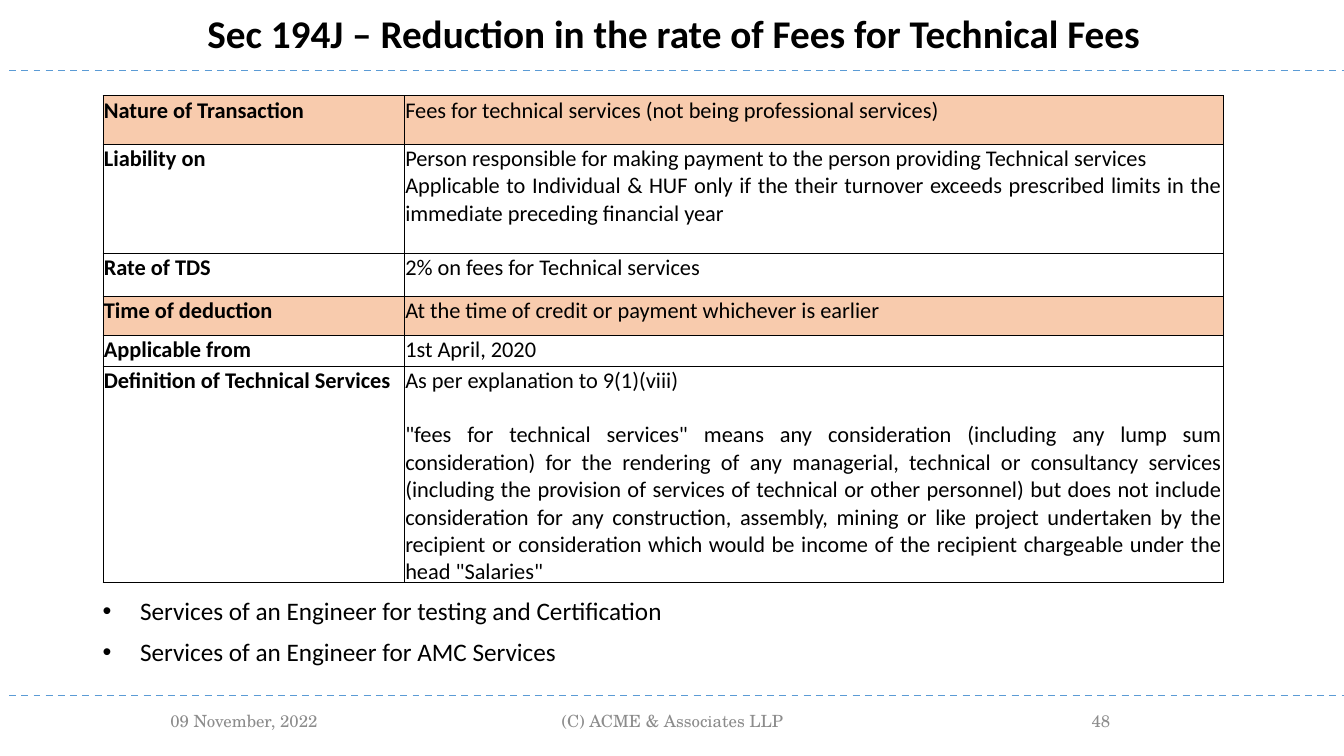
import pptx
import pptx.dml.color
import pptx.enum.dml
import pptx.enum.shapes
import pptx.enum.text
import pptx.oxml
import pptx.oxml.ns
import pptx.util
from lxml import etree

Inches = pptx.util.Inches
Pt = pptx.util.Pt
ALIGN = pptx.enum.text.PP_ALIGN
ANCHOR = pptx.enum.text.MSO_ANCHOR

COLORS = {"text": "000000", "footer": "8C8C8C", "rule": "5B9BD5", "highlight": "F8CBAD"}
SLIDE_WIDTH, SLIDE_HEIGHT = 13.33, 7.5
LIABILITY_ROW, SPARE_ROW = 1, 2
TABLE_ROWS = [
    (0.48, True, "Nature of Transaction",
     ["Fees for technical services (not being professional services)"]),
    (0.83, False, "Liability on",
     ["Person responsible for making payment to the person providing Technical services ",
      "Applicable to Individual & HUF only if the their turnover exceeds prescribed limits "
      "in the immediate preceding financial year"]),
    (0.25, False, "", []),
    (0.43, False, "Rate of TDS", ["2% on fees for Technical services "]),
    (0.39, True, "Time of deduction", ["At the time of credit or payment whichever is earlier"]),
    (0.3, False, "Applicable from", ["1st April, 2020"]),
    (2.14, False, "Definition of Technical Services",
     ["As per explanation to 9(1)(viii)",
      "\"fees for technical services\" means any consideration (including any lump sum "
      "consideration) for the rendering of any managerial, technical or consultancy services "
      "(including the provision of services of technical or other personnel) but does not "
      "include consideration for any construction, assembly, mining or like project undertaken "
      "by the recipient or consideration which would be income of the recipient chargeable "
      "under the head \"Salaries\""]),
]
DEFINITION_GAP = 19.5
BULLETS = ["Services of an Engineer for testing and Certification ",
           "Services of an Engineer for AMC Services"]
FOOTERS = [(0.92, 3, "09 November, 2022"),
           (4.42, 4.5, "(C) ACME & Associates LLP"),
           (9.42, 3, "48")]


def rgb(name):
    """Return the named colour."""
    return pptx.dml.color.RGBColor.from_string(COLORS[name])


def write(text_frame, lines, size, alignment, color="text", font="Calibri", bold=False):
    """Fill a text frame with one formatted paragraph per line."""
    text_frame.text = "\n".join(lines)
    text_frame.word_wrap = True
    for paragraph in text_frame.paragraphs:
        paragraph.alignment = alignment
        for run in paragraph.runs:
            run.font.size = Pt(size)
            run.font.name = font
            run.font.bold = bold
            run.font.color.rgb = rgb(color)


def add_text(slide, box, lines, size, alignment, **style):
    """Add a text box and return its text frame."""
    text_frame = slide.shapes.add_textbox(*map(Inches, box)).text_frame
    write(text_frame, lines, size, alignment, **style)
    return text_frame


def add_rule(slide, left, top, right):
    """Add a dashed horizontal rule."""
    rule = slide.shapes.add_connector(
        pptx.enum.shapes.MSO_CONNECTOR.STRAIGHT,
        Inches(left), Inches(top), Inches(right), Inches(top))
    rule.line.color.rgb = rgb("rule")
    rule.line.width = Pt(1.25)
    rule.line.dash_style = pptx.enum.dml.MSO_LINE.DASH
    etree.SubElement(rule._element.spPr, pptx.oxml.ns.qn("a:effectLst"))


def add_borders(cell, sides):
    """Draw a thin line on the given sides of a cell and none on the others."""
    properties = cell._tc.get_or_add_tcPr()
    solid = f'<a:solidFill><a:srgbClr val="{COLORS["text"]}"/></a:solidFill>'
    for index, side in enumerate("LRTB"):
        paint = solid if side in sides else "<a:noFill/>"
        properties.insert(index, pptx.oxml.parse_xml(
            f'<a:ln{side} {pptx.oxml.ns.nsdecls("a")} w="{Pt(0.5)}">{paint}</a:ln{side}>'))


def format_cell(cell, lines, alignment, highlighted, bold, sides="LRTB"):
    """Fill, frame and write one table cell."""
    cell.margin_left = cell.margin_top = cell.margin_right = Inches(0.01)
    cell.margin_bottom = 0
    if highlighted:
        cell.fill.solid()
        cell.fill.fore_color.rgb = rgb("highlight")
    else:
        cell.fill.background()
    write(cell.text_frame, lines, 16, alignment, bold=bold)
    if not any(lines):
        etree.SubElement(cell.text_frame.paragraphs[0]._p,
                         pptx.oxml.ns.qn("a:endParaRPr"), sz="1200")
    add_borders(cell, sides)


def add_details_table(slide, left, top, width):
    """Add the two-column table of the section's provisions."""
    height = sum(row[0] for row in TABLE_ROWS)
    table = slide.shapes.add_table(
        len(TABLE_ROWS), 2, Inches(left), Inches(top), Inches(width), Inches(height)).table
    table.first_row = table.horz_banding = False
    label_width = 2.99
    table.columns[0].width = Inches(label_width)
    table.columns[1].width = Inches(width - label_width)
    open_sides = {LIABILITY_ROW: "LRT", SPARE_ROW: "LRB"}
    for index, (row_height, highlighted, label, lines) in enumerate(TABLE_ROWS):
        table.rows[index].height = Inches(row_height)
        format_cell(table.cell(index, 0), [label], ALIGN.LEFT, highlighted, True)
        format_cell(table.cell(index, 1), lines, ALIGN.JUSTIFY, highlighted, False,
                    open_sides.get(index, "LRTB"))
    table.cell(LIABILITY_ROW, 0).merge(table.cell(SPARE_ROW, 0))
    definition = table.cell(len(TABLE_ROWS) - 1, 1).text_frame.paragraphs[1]
    definition.space_before = Pt(DEFINITION_GAP)


def add_bullets(slide, box):
    """Add the bulleted examples below the table."""
    for paragraph in add_text(slide, box, BULLETS, 18, ALIGN.JUSTIFY).paragraphs:
        paragraph.line_spacing = 0.9
        paragraph.space_before = Pt(10)
        properties = paragraph._p.get_or_add_pPr()
        properties.set("marL", str(Inches(0.37)))
        properties.set("indent", str(-Inches(0.37)))
        etree.SubElement(properties, pptx.oxml.ns.qn("a:buFont"), typeface="Arial")
        etree.SubElement(properties, pptx.oxml.ns.qn("a:buChar"), char="•")


def add_footer(slide, top, height):
    """Add the date, firm and slide number."""
    for left, width, text in FOOTERS:
        text_frame = add_text(slide, (left, top, width, height), [text], 12, ALIGN.CENTER,
                              color="footer", font="TeX Gyre Schola")
        text_frame.vertical_anchor = ANCHOR.MIDDLE


def main():
    """Build and save the presentation."""
    presentation = pptx.Presentation()
    presentation.slide_width = Inches(SLIDE_WIDTH)
    presentation.slide_height = Inches(SLIDE_HEIGHT)
    slide = presentation.slides.add_slide(presentation.slide_layouts[6])
    add_footer(slide, 6.95, 0.4)
    for top in (0.7, 6.9):
        add_rule(slide, 0.09, top, SLIDE_WIDTH)
    add_text(slide, (0.41, 0.04, 12.54, 0.57),
             ["Sec 194J – Reduction in the rate of Fees for Technical Fees"],
             28, ALIGN.CENTER, bold=True)
    add_details_table(slide, 1.02, 0.95, 11.11)
    add_bullets(slide, (0.92, 5.89, 11.49, 0.8))
    presentation.save("out.pptx")


if __name__ == "__main__":
    main()
